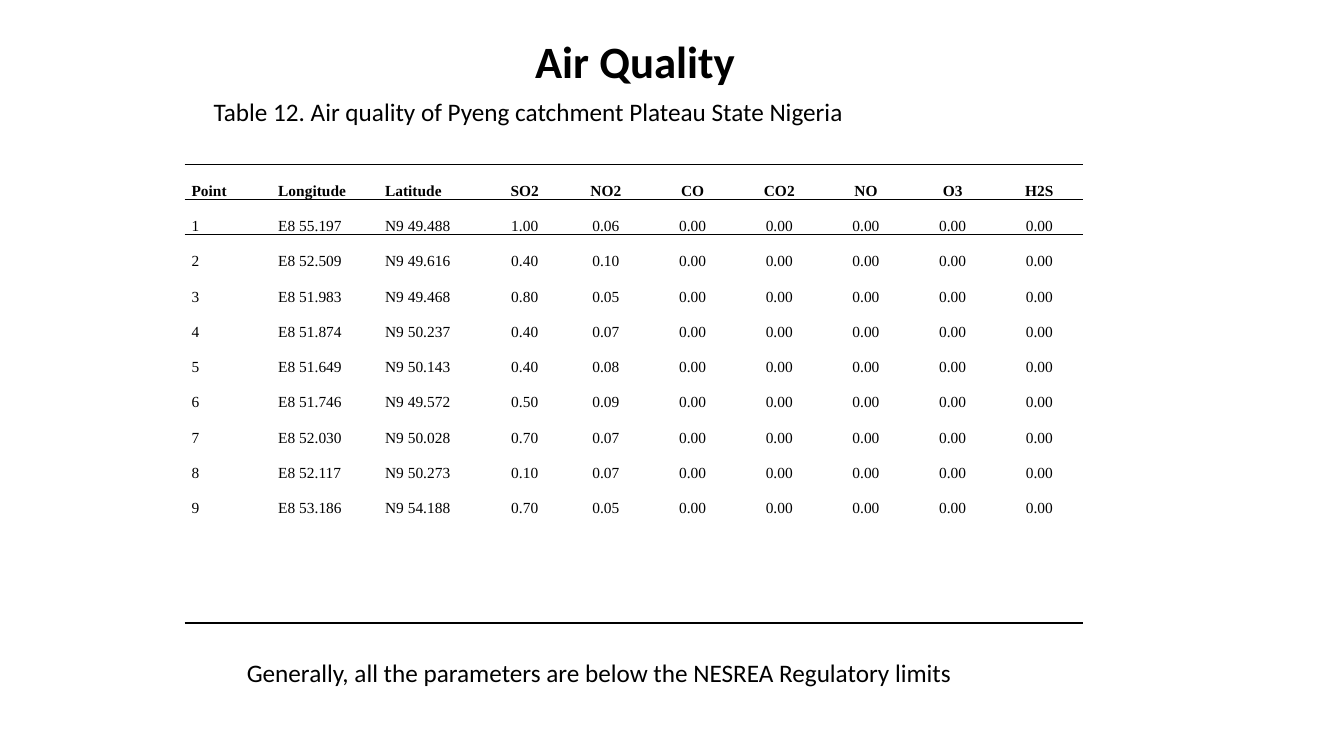
from lxml.etree import SubElement
from pptx import Presentation
from pptx.dml.color import RGBColor
from pptx.enum.text import MSO_ANCHOR, PP_ALIGN
from pptx.oxml.ns import qn
from pptx.util import Pt

PX = 9144
BLACK = RGBColor(0, 0, 0)
SANS = "Calibri"
SERIF = "Times New Roman"
PLAIN_STYLE = "{2D5ABB26-0587-4C30-8999-92F81FD0307C}"

COL_WIDTHS = [86, 106, 108, 75] + [86] * 6
ROW_HEIGHTS = [35] * 10 + [70, 35]
HEADERS = ["Point", "Longitude", "Latitude", "SO2", "NO2", "CO", "CO2", "NO", "O3", "H2S"]
READINGS = [
    ("E8 55.197", "N9 49.488", "1.00", "0.06"),
    ("E8 52.509", "N9 49.616", "0.40", "0.10"),
    ("E8 51.983", "N9 49.468", "0.80", "0.05"),
    ("E8 51.874", "N9 50.237", "0.40", "0.07"),
    ("E8 51.649", "N9 50.143", "0.40", "0.08"),
    ("E8 51.746", "N9 49.572", "0.50", "0.09"),
    ("E8 52.030", "N9 50.028", "0.70", "0.07"),
    ("E8 52.117", "N9 50.273", "0.10", "0.07"),
    ("E8 53.186", "N9 54.188", "0.70", "0.05"),
]
ROWS = [HEADERS] + [[str(n), *row] + ["0.00"] * 5 for n, row in enumerate(READINGS, 1)]


def emu(box):
    return [v * PX for v in box]


def add_run(p, text, font, size, bold=False):
    r = p.add_run()
    r.text = text
    r.font.name = font
    r.font.size = Pt(size)
    r.font.bold = bold
    r.font.color.rgb = BLACK


def add_title(s, box, text):
    sp = s.shapes.title
    sp.left, sp.top, sp.width, sp.height = emu(box)
    tf = sp.text_frame
    tf.vertical_anchor = MSO_ANCHOR.MIDDLE
    p = tf.paragraphs[0]
    p.alignment = PP_ALIGN.CENTER
    p.line_spacing = 0.9
    add_run(p, text, SANS, 32, True)


def add_caption(s, box, text):
    tf = s.shapes.add_textbox(*emu(box)).text_frame
    tf.word_wrap = True
    add_run(tf.paragraphs[0], text, SANS, 18)


def set_rules(cell, sides):
    tc_pr = cell.fill._xPr
    for i, side in enumerate(sides):
        ln = SubElement(tc_pr, qn(f"a:ln{side}"), w=str(Pt(1)))
        fill = SubElement(ln, qn("a:solidFill"))
        SubElement(fill, qn("a:srgbClr"), val=str(BLACK))
        tc_pr.insert(i, ln)


def format_cell(cell, row, col):
    cell.fill.background()
    cell.vertical_anchor = MSO_ANCHOR.BOTTOM
    cell.margin_left = cell.margin_right = 7 * PX
    cell.margin_top = cell.margin_bottom = 0
    if row < len(ROWS):
        p = cell.text_frame.paragraphs[0]
        p.alignment = PP_ALIGN.LEFT if col < 3 else PP_ALIGN.CENTER
        p.line_spacing = 1.15
        add_run(p, ROWS[row][col], SERIF, 11, row == 0)
    set_rules(cell, {0: "TB", 1: "T", len(ROW_HEIGHTS) - 1: "B"}.get(row, ""))


def add_readings(s, left, top):
    box = (left, top, sum(COL_WIDTHS), sum(ROW_HEIGHTS))
    frame = s.shapes.add_table(len(ROW_HEIGHTS), len(COL_WIDTHS), *emu(box))
    table = frame.table
    table.first_row = table.horz_banding = False
    for style in frame.element.iter(qn("a:tableStyleId")):
        style.text = PLAIN_STYLE
    for column, width in zip(table.columns, COL_WIDTHS):
        column.width = width * PX
    for i, height in enumerate(ROW_HEIGHTS):
        table.rows[i].height = height * PX
        for j in range(len(COL_WIDTHS)):
            format_cell(table.cell(i, j), i, j)


def main():
    prs = Presentation()
    prs.slide_width, prs.slide_height = emu((1333, 750))
    s = prs.slides.add_slide(prs.slide_layouts[5])
    add_title(s, (55, 0, 1150, 127), "Air Quality")
    add_readings(s, 183, 163)
    add_caption(s, (235, 647, 786, 40),
                "Generally, all the parameters are below the NESREA Regulatory limits")
    add_caption(s, (202, 91, 850, 40),
                "Table 12. Air quality of Pyeng catchment Plateau State Nigeria")
    prs.save("out.pptx")


if __name__ == "__main__":
    main()
